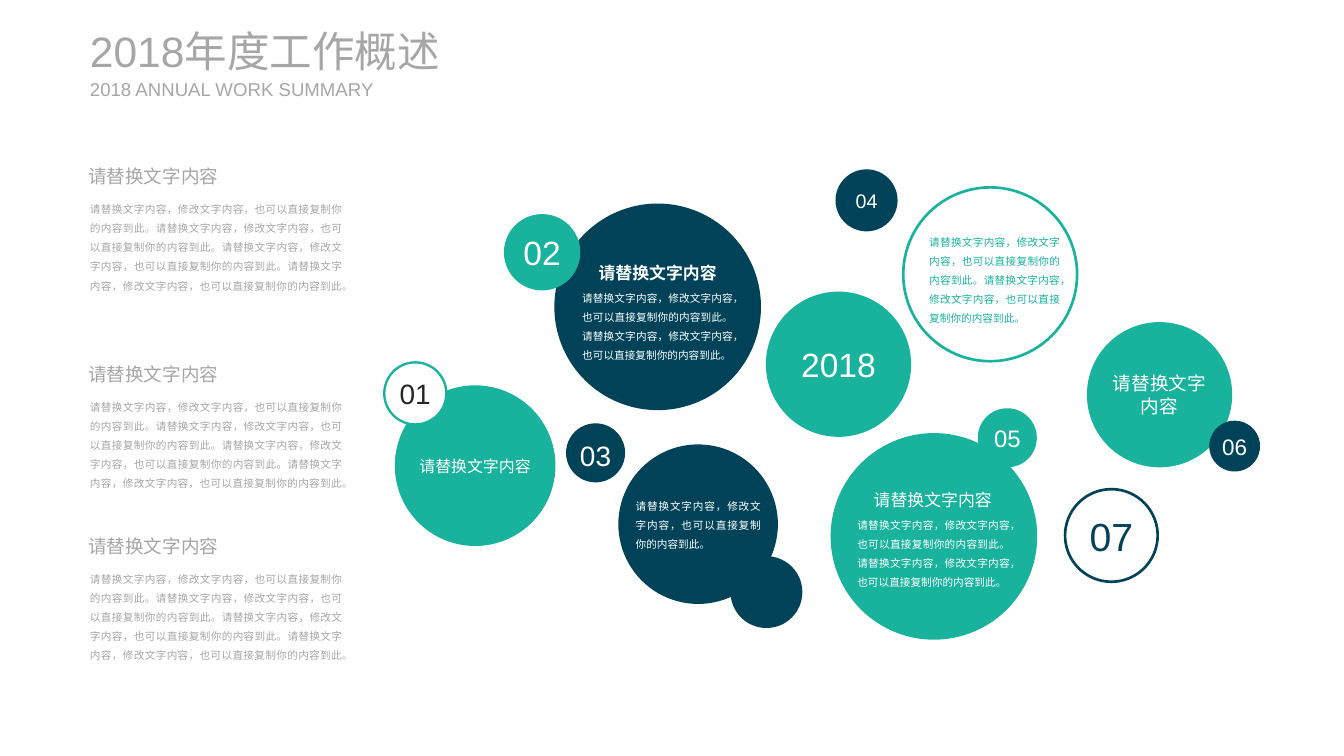
from pptx import Presentation
from pptx.dml.color import RGBColor
from pptx.enum.shapes import MSO_SHAPE
from pptx.enum.text import MSO_ANCHOR, MSO_AUTO_SIZE, PP_ALIGN
from pptx.util import Cm, Pt

NAVY = RGBColor(0x00, 0x43, 0x58)
TEAL = RGBColor(0x18, 0xB2, 0x9D)
WHITE = RGBColor(0xFF, 0xFF, 0xFF)
GREY = RGBColor(0xA6, 0xA6, 0xA6)
BLACK = RGBColor(0x26, 0x26, 0x26)

HEADING = "请替换文字内容"
SENTENCE = "请替换文字内容，修改文字内容，也可以直接复制你的内容到此。"

# left, top, diameter, fill, outline, outline width, label, label size, label colour
CIRCLES = [
    (14.73, 5.41, 5.49, NAVY, None, 0, "", 0, WHITE),
    (15.04, 11.25, 1.57, NAVY, None, 0, "03", 21.1, WHITE),
    (13.39, 5.69, 2.03, TEAL, None, 0, "02", 25.3, WHITE),
    (22.2, 4.5, 1.65, NAVY, None, 0, "04", 14.8, WHITE),
    (20.35, 7.75, 3.86, TEAL, None, 0, "2018", 25.3, WHITE),
    (16.43, 11.81, 4.24, NAVY, None, 0, "", 0, WHITE),
    (19.41, 14.78, 1.91, NAVY, None, 0, "", 0, WHITE),
    (24, 4.98, 4.62, WHITE, TEAL, 2, "", 0, WHITE),
    (22.07, 11.51, 5.49, TEAL, None, 0, "", 0, WHITE),
    (25.98, 10.85, 1.57, TEAL, None, 0, "05", 18, WHITE),
    (10.49, 10.24, 4.27, TEAL, None, 0, HEADING, 12, WHITE),
    (10.21, 9.63, 1.65, WHITE, TEAL, 1.75, "01", 21.1, BLACK),
    (28.88, 8.56, 3.86, TEAL, None, 0, HEADING, 14, WHITE),
    (32.13, 11.18, 1.35, NAVY, None, 0, "06", 16.9, WHITE),
    (28.3, 13, 2.46, WHITE, NAVY, 2, "07", 29.5, NAVY),
]
# left, top, width, height, bold
CIRCLE_HEADINGS = [(15.47, 6.98, 4.01, 0.66, True), (22.78, 13, 4.01, 0.53, False)]
# left, top, width, height, sentences, colour
CIRCLE_BODIES = [
    (15.47, 7.59, 4.01, 2.06, 2, WHITE),
    (22.78, 13.61, 4.06, 2.06, 2, WHITE),
    (16.89, 13.11, 3.33, 1.55, 1, WHITE),
    (24.69, 6.1, 3.48, 2.57, 2, TEAL),
]
SECTION_TOPS = [4.39, 9.65, 14.22]
TITLES = [
    ("2018年度工作概述", 0.66, 10.97, 1.37, 32),
    ("2018 ANNUAL WORK SUMMARY", 2.06, 7.8, 0.61, 14),
]


def write(box, text, size, color, align=None, anchor=MSO_ANCHOR.TOP, bold=None,
          before=None, spacing=None, grow=False):
    frame = box.text_frame
    frame.word_wrap = True
    frame.auto_size = MSO_AUTO_SIZE.SHAPE_TO_FIT_TEXT if grow else MSO_AUTO_SIZE.NONE
    frame.vertical_anchor = anchor
    frame.margin_left = frame.margin_top = frame.margin_right = frame.margin_bottom = 0
    para = frame.paragraphs[0]
    para.alignment = align
    para.line_spacing = spacing
    para.space_before = before
    span = para.add_run()
    span.text = text
    span.font.name = "Arial"
    span.font.size = Pt(size)
    span.font.bold = bold
    span.font.color.rgb = color


def add_text(page, left, top, width, height, text, size, color, **layout):
    box = page.shapes.add_textbox(Cm(left), Cm(top), Cm(width), Cm(height))
    write(box, text, size, color, grow=True, **layout)


def add_body(page, left, top, width, height, sentences, color):
    add_text(page, left, top, width, height, SENTENCE * sentences, 8, color,
             align=PP_ALIGN.JUSTIFY, before=Pt(7.5), spacing=1.5)


def add_circle(page, left, top, diameter, fill, outline, weight, label, size, color):
    circle = page.shapes.add_shape(MSO_SHAPE.OVAL, Cm(left), Cm(top), Cm(diameter), Cm(diameter))
    circle.shadow.inherit = False
    circle.fill.solid()
    circle.fill.fore_color.rgb = fill
    if outline:
        circle.line.color.rgb = outline
        circle.line.width = Pt(weight)
    else:
        circle.line.fill.background()
    if label:
        write(circle, label, size, color, align=PP_ALIGN.CENTER, anchor=MSO_ANCHOR.MIDDLE)
    if label == "03":
        circle.text_frame.margin_top = Cm(0.13)


def main():
    """Build the yearly work summary slide with its numbered circles."""
    deck = Presentation()
    deck.slide_width, deck.slide_height = Cm(35.71), Cm(20.09)
    page = deck.slides.add_slide(deck.slide_layouts[6])

    for circle in CIRCLES:
        add_circle(page, *circle)
    for left, top, width, height, bold in CIRCLE_HEADINGS:
        add_text(page, left, top, width, height, HEADING, 12.7, WHITE,
                 align=PP_ALIGN.CENTER, before=Pt(7.5), bold=bold)
    for body in CIRCLE_BODIES:
        add_body(page, *body)
    for top in SECTION_TOPS:
        add_text(page, 2.34, top, 4.72, 0.61, HEADING, 14, GREY,
                 align=PP_ALIGN.JUSTIFY, before=Pt(7.5))
        add_body(page, 2.39, top + 0.84, 6.71, 2.57, 4, GREY)
    for text, top, width, height, size in TITLES:
        add_text(page, 2.39, top, width, height, text, size, GREY, anchor=MSO_ANCHOR.MIDDLE)

    deck.save("out.pptx")


if __name__ == "__main__":
    main()
